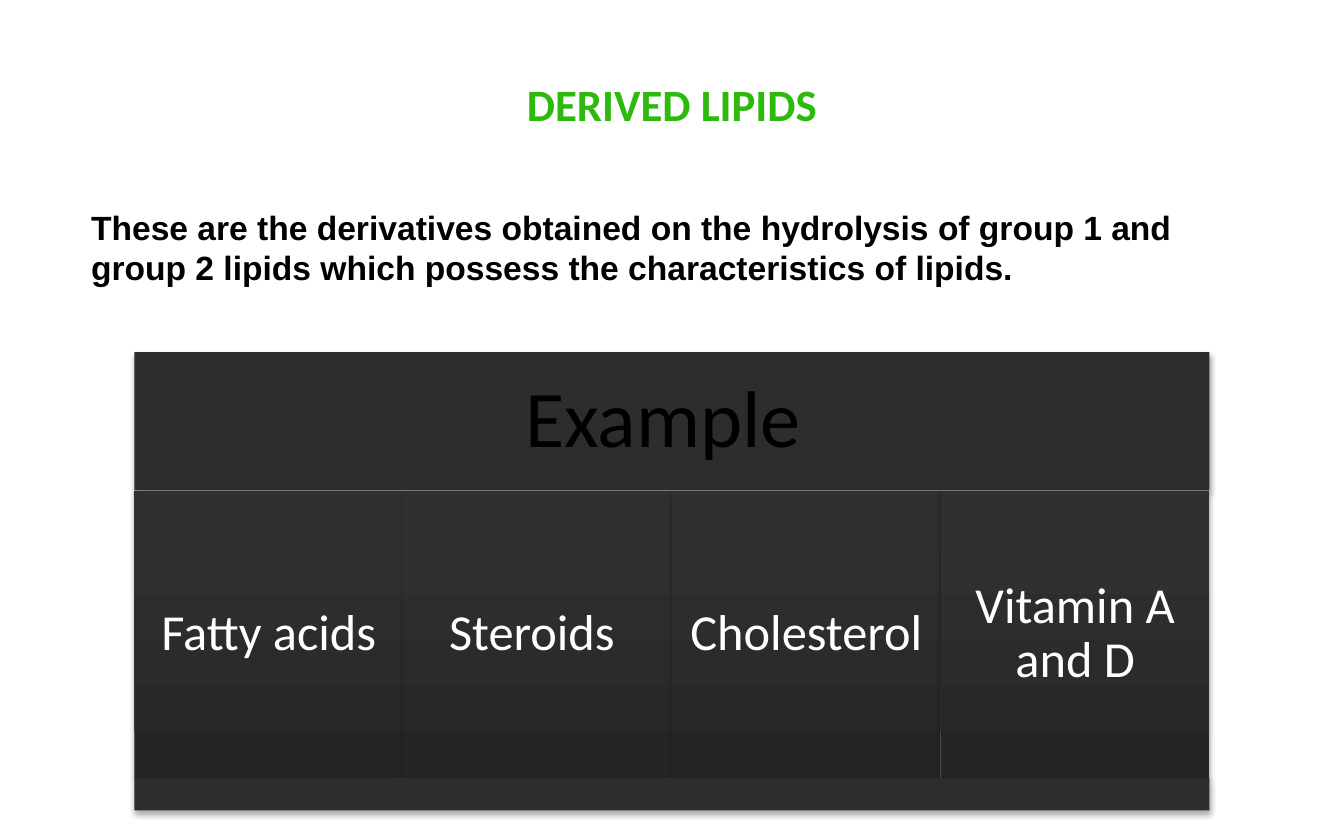
from copy import deepcopy

from lxml import etree
from pptx import Presentation
from pptx import util as u
from pptx.dml.color import RGBColor
from pptx.enum import shapes, text
from pptx.oxml.ns import nsdecls, qn
from pptx.oxml import parse_xml

TITLE = "DERIVED LIPIDS"
DEFINITION = ("These are the derivatives obtained on the hydrolysis of group 1 and "
              "group 2 lipids which possess the characteristics of lipids.")
HEADING = "Example "
EXAMPLES = ["Fatty acids", "Steroids ", "Cholesterol ", "Vitamin A and D"]

COLORS = {"title": "2DB90E", "body": "000000", "label": "FFFFFF",
          "paper": "FFFFFF", "band": "2D2D2D", "shadow": "000000"}
CELL_GRADIENT = [(0, "252525"), (0.8, "303030"), (1, "313131")]

PX = 9144  # 100 px to the inch
PANEL_LEFT, PANEL_TOP, PANEL_WIDTH = 100, 262, 800
HEADING_HEIGHT, CELL_HEIGHT, FOOT_HEIGHT = 103, 214, 24


def px(*lengths):
    return [u.Emu(length * PX) for length in lengths]


def write(shape, words, size, font, color, bold=False, inset=None,
          align=text.PP_ALIGN.CENTER, spacing=None,
          anchor=text.MSO_ANCHOR.MIDDLE):
    frame = shape.text_frame
    frame.word_wrap = True
    frame.vertical_anchor = anchor
    if inset is not None:
        frame.margin_left = frame.margin_right = u.Emu(inset * PX)
        frame.margin_top = frame.margin_bottom = u.Emu(inset * PX)
    frame.text = words
    para = frame.paragraphs[0]
    para.alignment = align
    if spacing:
        para.line_spacing = spacing
    span = para.runs[0].font
    span.size, span.name, span.bold = u.Pt(size), font, bold
    span.color.rgb = RGBColor.from_string(COLORS[color])


def fill_gradient(shape):
    """Run the cell gradient from bottom to top."""
    shape.fill.gradient()
    shape.fill.gradient_angle = 90
    stop_list = next(shape.element.spPr.iter(qn("a:gsLst")))
    stop_list.append(deepcopy(stop_list[-1]))
    for stop, (position, color) in zip(shape.fill.gradient_stops, CELL_GRADIENT):
        stop.position = position
        stop.color.rgb = RGBColor.from_string(color)


def add_shadow(shape):
    effects = parse_xml(f"<a:effectLst {nsdecls('a')}/>")
    shadow = etree.SubElement(effects, qn("a:outerShdw"), blurRad=str(u.Pt(3.1)),
                              dist=str(u.Pt(1.8)), dir="5400000", rotWithShape="0")
    color = etree.SubElement(shadow, qn("a:srgbClr"), val=COLORS["shadow"])
    etree.SubElement(color, qn("a:alpha"), val="35000")
    shape.element.spPr.append(effects)


def add_block(panel, left, top, width, height, fill=None):
    """Add a shadowed rectangle, with the cell gradient unless a fill is named."""
    block = panel.shapes.add_shape(shapes.MSO_SHAPE.RECTANGLE,
                                   *px(left, top, width, height))
    if fill:
        block.fill.solid()
        block.fill.fore_color.rgb = RGBColor.from_string(COLORS[fill])
    else:
        fill_gradient(block)
    block.line.fill.background()
    add_shadow(block)
    return block


deck = Presentation()
deck.slide_width, deck.slide_height = px(1000, 625)
page = deck.slides.add_slide(deck.slide_layouts[6])

definition = page.shapes.add_textbox(*px(58, 149, 883, 71))
definition.fill.solid()
definition.fill.fore_color.rgb = RGBColor.from_string(COLORS["paper"])
write(definition, DEFINITION, 18, "Arial", "body", bold=True,
      align=text.PP_ALIGN.LEFT, anchor=text.MSO_ANCHOR.TOP)

panel = page.shapes.add_group_shape()
heading = add_block(panel, PANEL_LEFT, PANEL_TOP, PANEL_WIDTH, HEADING_HEIGHT, "band")
write(heading, HEADING, 43, "Calibri", "body", inset=18, spacing=0.9)

cell_top = PANEL_TOP + HEADING_HEIGHT
cell_width = PANEL_WIDTH // len(EXAMPLES)
for column, example in enumerate(EXAMPLES):
    cell = add_block(panel, PANEL_LEFT + column * cell_width, cell_top,
                     cell_width, CELL_HEIGHT)
    write(cell, example, 27, "Calibri", "label", inset=11, spacing=0.9)

add_block(panel, PANEL_LEFT, cell_top + CELL_HEIGHT, PANEL_WIDTH, FOOT_HEIGHT, "band")

title = page.shapes.add_textbox(*px(50, 25, 900, 104))
write(title, TITLE, 24, "Calibri", "title", bold=True)

deck.save("out.pptx")
